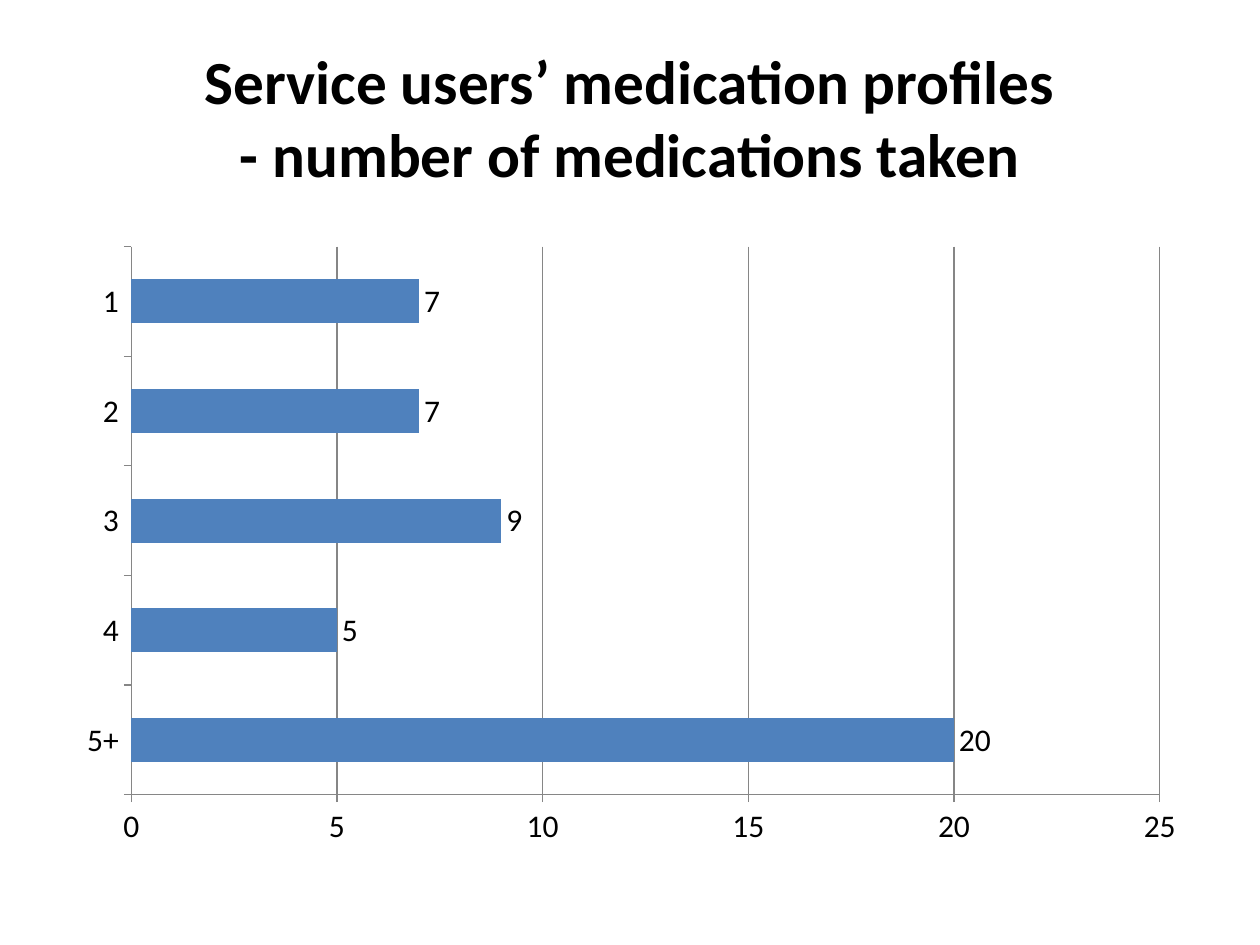
import pptx
import pptx.chart.data
import pptx.dml.color
import pptx.enum.chart
import pptx.enum.text
import pptx.util

Cm = pptx.util.Cm
Pt = pptx.util.Pt
RGBColor = pptx.dml.color.RGBColor

BLACK = RGBColor(0x00, 0x00, 0x00)
BLUE = RGBColor(0x4F, 0x81, 0xBD)
GREY = RGBColor(0x86, 0x86, 0x86)
FONT = "Calibri"

TITLE_LINES = ["Service users’ medication profiles", "- number of medications taken"]
MEDICATION_COUNTS = {"5+": 20, "4": 5, "3": 9, "2": 7, "1": 7}


def format_font(font, size, bold=False):
    font.name = FONT
    font.size = Pt(size)
    font.bold = bold
    font.color.rgb = BLACK


def format_line(line):
    line.color.rgb = GREY
    line.width = Pt(0.75)


def add_title(slide):
    title = slide.shapes.title
    title.left, title.top = Cm(1.27), Cm(0.76)
    title.width, title.height = Cm(22.86), Cm(3.18)
    title.text_frame.vertical_anchor = pptx.enum.text.MSO_ANCHOR.MIDDLE
    paragraph = title.text_frame.paragraphs[0]
    paragraph.alignment = pptx.enum.text.PP_ALIGN.CENTER
    for index, line in enumerate(TITLE_LINES):
        if index:
            paragraph.add_line_break()
        run = paragraph.add_run()
        run.text = line
        format_font(run.font, 35, bold=True)


def format_axis(axis):
    axis.major_tick_mark = pptx.enum.chart.XL_TICK_MARK.OUTSIDE
    axis.minor_tick_mark = pptx.enum.chart.XL_TICK_MARK.NONE
    format_line(axis.format.line)
    format_font(axis.tick_labels.font, 18)


def add_medication_chart(slide):
    data = pptx.chart.data.CategoryChartData()
    data.categories = list(MEDICATION_COUNTS)
    data.add_series("Series 1", list(MEDICATION_COUNTS.values()))
    chart = slide.shapes.add_chart(
        pptx.enum.chart.XL_CHART_TYPE.BAR_CLUSTERED,
        Cm(1.3), Cm(4.72), Cm(22.86), Cm(12.57), data,
    ).chart
    chart.has_title = False
    chart.has_legend = False
    format_font(chart.font, 18)

    format_axis(chart.category_axis)
    format_axis(chart.value_axis)
    chart.category_axis.has_major_gridlines = False
    chart.value_axis.has_major_gridlines = True
    format_line(chart.value_axis.major_gridlines.format.line)
    chart.value_axis.minimum_scale = 0
    chart.value_axis.maximum_scale = 25
    chart.value_axis.major_unit = 5

    plot = chart.plots[0]
    plot.gap_width = 150
    plot.vary_by_categories = False
    fill = plot.series[0].format.fill
    fill.solid()
    fill.fore_color.rgb = BLUE
    plot.has_data_labels = True
    labels = plot.data_labels
    labels.show_value = True
    labels.position = pptx.enum.chart.XL_LABEL_POSITION.OUTSIDE_END
    format_font(labels.font, 18)


def main():
    presentation = pptx.Presentation()
    presentation.slide_width = Cm(25.4)
    presentation.slide_height = Cm(19.05)
    slide = presentation.slides.add_slide(presentation.slide_layouts[5])
    add_title(slide)
    add_medication_chart(slide)
    presentation.save("out.pptx")


if __name__ == "__main__":
    main()
